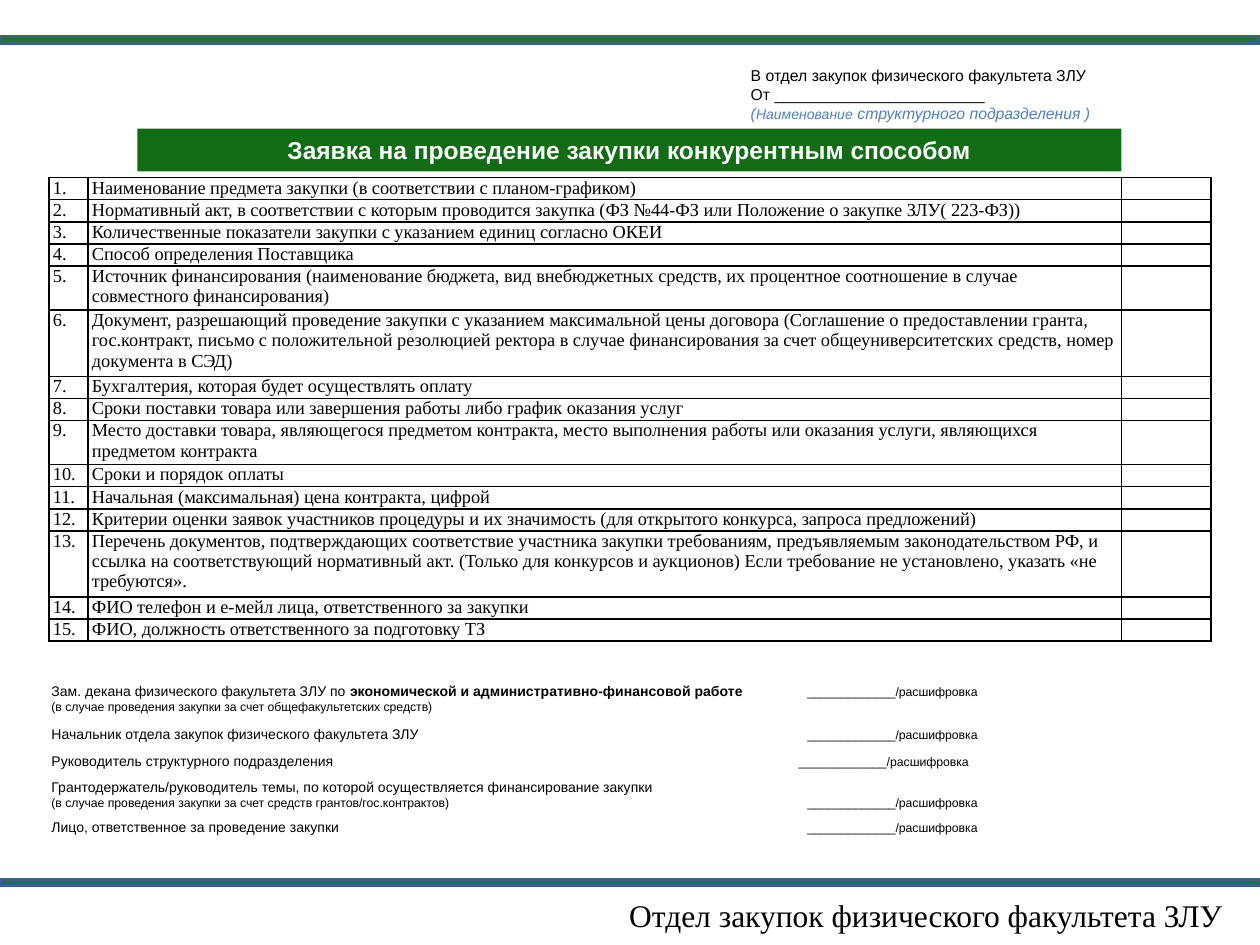
from dataclasses import dataclass

from lxml.etree import SubElement
from pptx import Presentation
from pptx.dml.color import RGBColor
from pptx.enum.shapes import MSO_SHAPE
from pptx.enum.text import MSO_ANCHOR, MSO_AUTO_SIZE, PP_ALIGN
from pptx.oxml.ns import qn
from pptx.util import Inches, Pt

COLORS = {
    "black": "000000",
    "white": "FFFFFF",
    "title": "126C16",
    "bar": "1B7338",
    "bar_line": "3A5F8C",
    "hint": "4F81BD",
}
SANS, SERIF = "Arial", "Times New Roman"
COLUMN_WIDTHS = (0.31, 8.2, 0.71)
TABLE_HEIGHT = 3.68
TABLE_TEXT_SIZE = 10.5
SIGNATURE_LINE = "_____________/расшифровка"


@dataclass
class Item:
    text: str
    lines: int = 1


@dataclass
class Signature:
    role: str
    bold_part: str = ""
    note: str = ""
    line_at: float = 6.0
    line_on_note: bool = False
    space_before: float = 0


ITEMS = [
    Item("Наименование предмета закупки (в соответствии с планом-графиком)"),
    Item("Нормативный акт, в соответствии с которым проводится закупка "
         "(ФЗ №44-ФЗ или Положение о закупке ЗЛУ( 223-ФЗ))"),
    Item("Количественные показатели закупки с указанием единиц согласно ОКЕИ"),
    Item("Способ определения Поставщика"),
    Item("Источник финансирования (наименование бюджета, вид внебюджетных средств, "
         "их процентное соотношение в случае совместного финансирования)", 2),
    Item("Документ, разрешающий проведение закупки с указанием максимальной цены договора "
         "(Соглашение о предоставлении гранта, гос.контракт, письмо с положительной "
         "резолюцией ректора в случае финансирования за счет общеуниверситетских средств, "
         "номер документа в СЭД)", 3),
    Item("Бухгалтерия, которая будет осуществлять оплату"),
    Item("Сроки поставки товара или завершения работы либо график оказания услуг"),
    Item("Место доставки товара, являющегося предметом контракта, место выполнения работы "
         "или оказания услуги, являющихся предметом контракта", 2),
    Item("Сроки и порядок оплаты"),
    Item("Начальная (максимальная) цена контракта, цифрой"),
    Item("Критерии оценки заявок участников процедуры и их значимость "
         "(для открытого конкурса, запроса предложений)"),
    Item("Перечень документов, подтверждающих соответствие участника закупки требованиям, "
         "предъявляемым законодательством РФ, и ссылка на соответствующий нормативный акт. "
         "(Только для конкурсов и аукционов) Если требование не установлено, "
         "указать «не требуются».", 3),
    Item("ФИО телефон и е-мейл лица, ответственного за закупки"),
    Item("ФИО, должность ответственного за подготовку ТЗ"),
]

SIGNATURES = [
    Signature("Зам. декана физического факультета ЗЛУ по ",
              bold_part="экономической и административно-финансовой работе",
              note="(в случае проведения закупки за счет общефакультетских средств)"),
    Signature("Начальник отдела закупок физического факультета ЗЛУ", space_before=6.5),
    Signature("Руководитель структурного подразделения", line_at=5.93, space_before=6),
    Signature("Грантодержатель/руководитель темы, по которой осуществляется "
              "финансирование закупки",
              note="(в случае проведения закупки за счет средств грантов/гос.контрактов)",
              line_on_note=True, space_before=5),
    Signature("Лицо, ответственное за проведение закупки", space_before=5),
]


def add_span(para, text: str, *, size: float, font: str = SANS, color: str = "black",
             bold: bool = False, italic: bool = False) -> None:
    span = para.add_run()
    span.text = text
    span.font.size = Pt(size)
    span.font.name = font
    span.font.bold = bold
    span.font.italic = italic
    span.font.color.rgb = RGBColor.from_string(COLORS[color])


def add_box(slide, left: float, top: float, width: float, height: float):
    """Add a wrapping text box and return its text frame."""
    box = slide.shapes.add_textbox(Inches(left), Inches(top), Inches(width), Inches(height))
    box.text_frame.word_wrap = True
    return box.text_frame


def next_para(frame):
    """Return the first paragraph while it is unused, otherwise a new one."""
    first = frame.paragraphs[0]
    return frame.add_paragraph() if first.runs else first


def add_bar(slide, top: float) -> None:
    bar = slide.shapes.add_shape(MSO_SHAPE.RECTANGLE, 0, Inches(top), Inches(10), Inches(0.05))
    bar.shadow.inherit = False
    bar.fill.solid()
    bar.fill.fore_color.rgb = RGBColor.from_string(COLORS["bar"])
    bar.line.color.rgb = RGBColor.from_string(COLORS["bar_line"])
    bar.line.width = Pt(2)


def format_title(title) -> None:
    title.left, title.top = Inches(1.09), Inches(1.02)
    title.width, title.height = Inches(7.81), Inches(0.34)
    title.fill.solid()
    title.fill.fore_color.rgb = RGBColor.from_string(COLORS["title"])
    frame = title.text_frame
    frame.auto_size = MSO_AUTO_SIZE.NONE
    frame.vertical_anchor = MSO_ANCHOR.MIDDLE
    para = frame.paragraphs[0]
    para.alignment = PP_ALIGN.CENTER
    add_span(para, "Заявка на проведение закупки конкурентным способом",
             size=14, color="white", bold=True)


def fill_cell(cell, text: str) -> None:
    cell.margin_left = cell.margin_right = Inches(0.03)
    cell.margin_top = cell.margin_bottom = 0
    para = cell.text_frame.paragraphs[0]
    if text:
        add_span(para, text, size=TABLE_TEXT_SIZE, font=SERIF)
    else:
        SubElement(para._p, qn("a:endParaRPr"), sz=str(int(TABLE_TEXT_SIZE * 100)))
    properties = cell._tc.get_or_add_tcPr()
    for side in ("a:lnL", "a:lnR", "a:lnT", "a:lnB"):
        border = SubElement(properties, qn(side), w=str(Pt(1)))
        SubElement(SubElement(border, qn("a:solidFill")), qn("a:srgbClr"), val=COLORS["black"])
    cell.fill.background()


def add_items_table(slide, items: list[Item]) -> None:
    table = slide.shapes.add_table(len(items), len(COLUMN_WIDTHS), Inches(0.39), Inches(1.41),
                                   Inches(sum(COLUMN_WIDTHS)), Inches(TABLE_HEIGHT)).table
    table.first_row = table.horz_banding = False
    for column, width in zip(table.columns, COLUMN_WIDTHS):
        column.width = Inches(width)
    line_height = TABLE_HEIGHT / sum(item.lines for item in items)
    for number, (row, item) in enumerate(zip(table.rows, items), start=1):
        row.height = Inches(item.lines * line_height)
        for cell, text in zip(row.cells, (f"{number}.", item.text, "")):
            fill_cell(cell, text)


def add_signature_line(para, position: float) -> None:
    stops = SubElement(para._p.get_or_add_pPr(), qn("a:tabLst"))
    SubElement(stops, qn("a:tab"), pos=str(Inches(position)), algn="l")
    add_span(para, "\t" + SIGNATURE_LINE, size=7)


def add_signature(frame, signature: Signature) -> None:
    para = next_para(frame)
    para.space_before = Pt(signature.space_before)
    add_span(para, signature.role, size=8)
    if signature.bold_part:
        add_span(para, signature.bold_part, size=8, bold=True)
    if not signature.line_on_note:
        add_signature_line(para, signature.line_at)
    if signature.note:
        note = next_para(frame)
        add_span(note, signature.note, size=7)
        if signature.line_on_note:
            add_signature_line(note, signature.line_at)


def add_addressee(slide) -> None:
    frame = add_box(slide, 5.86, 0.47, 3.98, 0.56)
    for text in ("В отдел закупок физического факультета ЗЛУ", "От " + "_" * 24):
        add_span(next_para(frame), text, size=9)
    hint = next_para(frame)
    for text, size in (("(", 9), ("Наименование", 8), (" структурного подразделения )", 9)):
        add_span(hint, text, size=size, color="hint", italic=True)


def main() -> None:
    deck = Presentation()
    deck.slide_width, deck.slide_height = Inches(10), Inches(7.5)
    slide = deck.slides.add_slide(deck.slide_layouts[5])
    for top in (0.29, 6.98):
        add_bar(slide, top)
    footer = add_box(slide, 4.8, 7.06, 5, 0.4).paragraphs[0]
    footer.alignment = PP_ALIGN.RIGHT
    add_span(footer, "Отдел закупок физического факультета ЗЛУ", size=18, font=SERIF)
    add_items_table(slide, ITEMS)
    signatures = add_box(slide, 0.31, 5.37, 8.52, 1.31)
    signatures.vertical_anchor = MSO_ANCHOR.MIDDLE
    for signature in SIGNATURES:
        add_signature(signatures, signature)
    add_addressee(slide)
    format_title(slide.shapes.title)
    deck.save("out.pptx")


if __name__ == "__main__":
    main()
